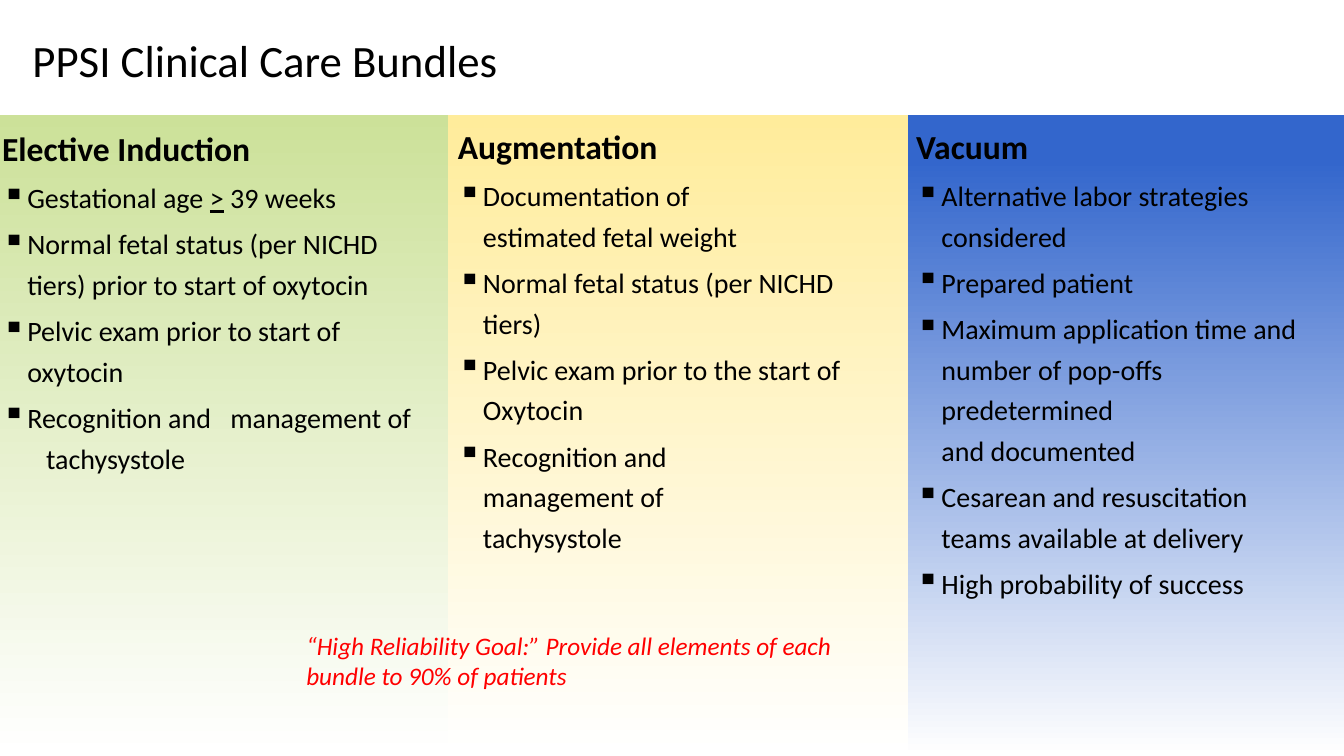
import dataclasses

import lxml.etree
import pptx
import pptx.dml.color
import pptx.enum.shapes
import pptx.enum.text
import pptx.oxml.ns
import pptx.util

Pt = pptx.util.Pt


@dataclasses.dataclass(frozen=True)
class Theme:
    font: str = "Calibri"
    ink: str = "000000"
    accent: str = "FF0000"
    white: str = "FFFFFF"
    green: str = "CCE199"
    yellow: str = "FFEC9B"
    blue: str = "3366CC"
    title: float = 32
    heading: float = 24
    body: float = 20
    goal: float = 18
    body_line: float = 29
    indent: float = 18


class PageBuilder:
    def __init__(self, deck, theme):
        self.theme = theme
        self.page = deck.slides.add_slide(deck.slide_layouts[5])

    def span(self, para, text, size, color=None, **style):
        span = para.add_run()
        span.text = text
        span.font.name = self.theme.font
        span.font.size = Pt(size)
        span.font.color.rgb = pptx.dml.color.RGBColor.from_string(color or self.theme.ink)
        for name, value in style.items():
            setattr(span.font, name, value)

    def title(self, text, left, top, width, height):
        box = self.page.shapes.title
        box.left, box.top, box.width, box.height = map(Pt, (left, top, width, height))
        box.text_frame.vertical_anchor = pptx.enum.text.MSO_ANCHOR.MIDDLE
        para = box.text_frame.paragraphs[0]
        para.alignment = pptx.enum.text.PP_ALIGN.LEFT
        para.line_spacing = 0.9
        self.span(para, text, self.theme.title)

    def panel(self, left, top, width, height, color, start):
        panel = self.page.shapes.add_shape(
            pptx.enum.shapes.MSO_SHAPE.RECTANGLE, *map(Pt, (left, top, width, height)))
        panel.shadow.inherit = False
        panel.line.fill.background()
        panel.fill.gradient()
        panel.fill.gradient_angle = 270
        stops = zip(panel.fill.gradient_stops, (color, self.theme.white), (start, 1))
        for stop, shade, position in stops:
            stop.color.rgb = pptx.dml.color.RGBColor.from_string(shade)
            stop.position = position

    def text_box(self, left, top, width, height):
        frame = self.page.shapes.add_textbox(*map(Pt, (left, top, width, height))).text_frame
        frame.word_wrap = True
        frame.margin_left = frame.margin_right = frame.margin_top = frame.margin_bottom = 0
        return frame

    def bullet(self, para, tabs):
        props = para._p.get_or_add_pPr()
        props.set("marL", str(Pt(self.theme.indent)))
        props.set("indent", str(-Pt(self.theme.indent)))

        def add(parent, tag, **attributes):
            return lxml.etree.SubElement(parent, pptx.oxml.ns.qn(tag), attributes)

        add(add(props, "a:buClr"), "a:srgbClr", val=self.theme.ink)
        add(props, "a:buSzPct", val="115000")
        add(props, "a:buChar", char="▪")
        if tabs:
            tab_list = add(props, "a:tabLst")
            for tab in tabs:
                add(tab_list, "a:tab", pos=str(Pt(tab)), algn="l")

    def bundle(self, left, top, width, height, heading, items, tabs=()):
        """Each item is a list of lines; a line is text or (text, underlined) parts."""
        theme = self.theme
        frame = self.text_box(left, top, width, height)
        para = frame.paragraphs[0]
        para.line_spacing = 1.15
        para.space_before = Pt(theme.heading * 0.2)
        self.span(para, heading, theme.heading, bold=True)
        for lines in items:
            para = frame.add_paragraph()
            para.line_spacing = Pt(theme.body_line)
            para.space_before = Pt(theme.body * 0.2)
            has_tab = any("\t" in line for line in lines)
            self.bullet(para, tabs if has_tab else ())
            for number, line in enumerate(lines):
                if number:
                    para.add_line_break()
                parts = [(line, False)] if isinstance(line, str) else line
                for text, underlined in parts:
                    self.span(para, text, theme.body, underline=underlined)

    def goal(self, text, left, top, width, height):
        frame = self.text_box(left, top, width, height)
        self.span(frame.paragraphs[0], text, self.theme.goal, self.theme.accent, italic=True)


def main():
    theme = Theme()
    deck = pptx.Presentation()
    deck.slide_width, deck.slide_height = Pt(960), Pt(540)
    builder = PageBuilder(deck, theme)

    builder.title("PPSI Clinical Care Bundles", 16, 15, 692, 60)

    # Coloured columns, each fading to white
    top = 82
    for left, right, color, start in (
        (0, 320, theme.green, 0),
        (320, 648.7, theme.yellow, 0),
        (648.7, 960, theme.blue, 0.07),
    ):
        builder.panel(left, top, right - left, 540 - top, color, start)

    # Care bundles
    builder.bundle(1.5, 87, 305, 306, "Elective Induction", [
        [[("Gestational age ", False), (">", True), (" 39 weeks", False)]],
        ["Normal fetal status (per NICHD tiers) prior to start of oxytocin"],
        ["Pelvic exam prior to start of oxytocin"],
        ["Recognition and\tmanagement of", "\ttachysystole"],
    ], tabs=(31.5, 163))
    builder.bundle(327, 85.6, 283, 347, "Augmentation", [
        ["Documentation of", "estimated fetal weight"],
        ["Normal fetal status (per NICHD tiers)"],
        ["Pelvic exam prior to the start of Oxytocin"],
        ["Recognition and", "management of", "tachysystole"],
    ])
    builder.bundle(654.5, 85.6, 283, 354, "Vacuum", [
        ["Alternative labor strategies considered"],
        ["Prepared patient"],
        ["Maximum application time and number of pop-offs predetermined", "and documented"],
        ["Cesarean and resuscitation teams available at delivery"],
        ["High probability of success"],
    ])

    # Shared goal
    builder.goal("“High Reliability Goal:” Provide all elements of each bundle to 90% of patients",
                 218.8, 450, 412, 44)

    deck.save("out.pptx")


if __name__ == "__main__":
    main()
